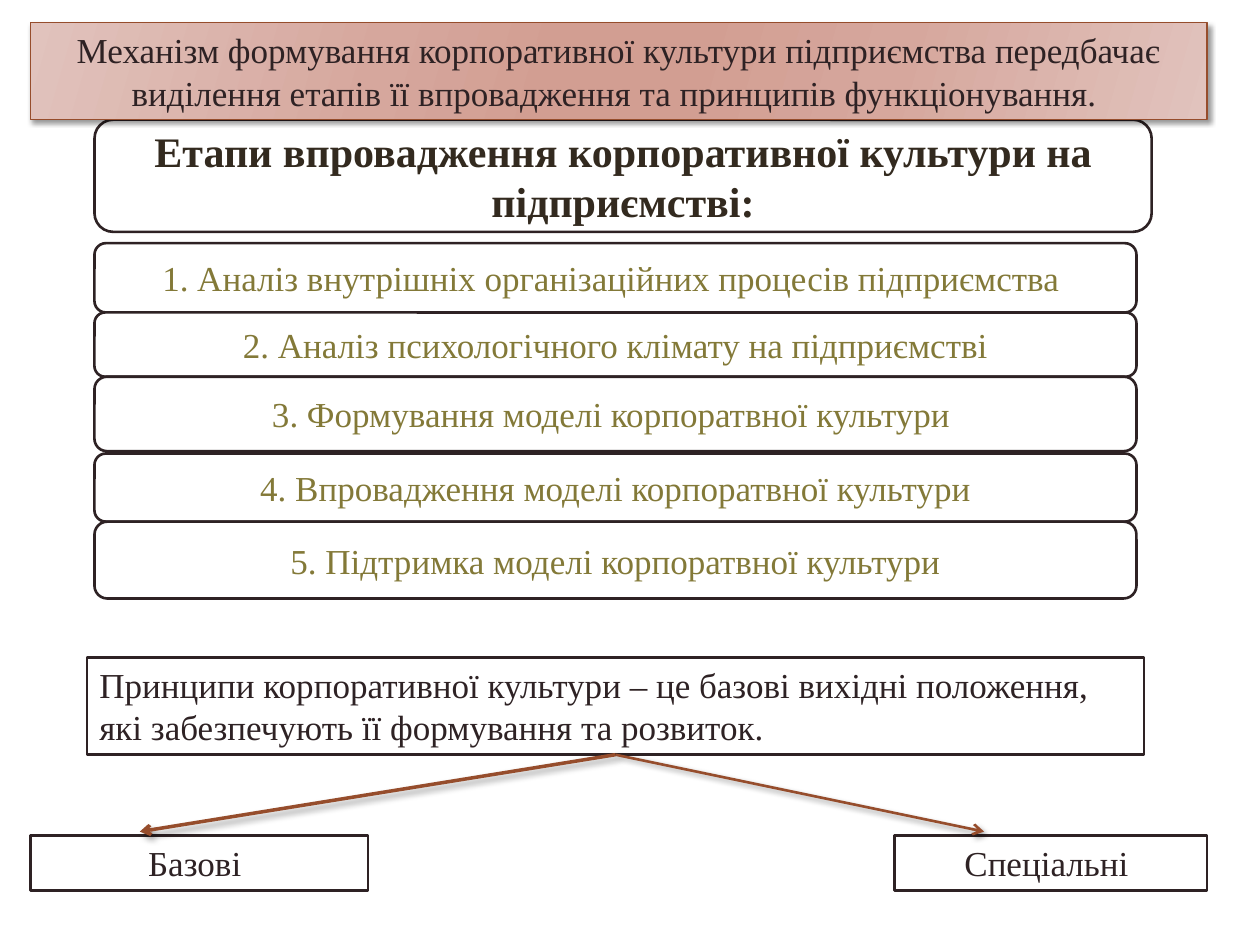
from lxml.etree import SubElement
from pptx import Presentation
from pptx.dml.color import RGBColor
from pptx.enum.shapes import MSO_CONNECTOR, MSO_SHAPE
from pptx.enum.text import MSO_ANCHOR, MSO_AUTO_SIZE, PP_ALIGN
from pptx.oxml.ns import qn
from pptx.util import Inches, Pt

WHITE = RGBColor(0xFF, 0xFF, 0xFF)
DARK = RGBColor(0x2E, 0x22, 0x24)
BROWN = RGBColor(0x33, 0x2A, 0x1F)
OLIVE = RGBColor(0x83, 0x79, 0x38)
RUST = RGBColor(0x96, 0x4D, 0x2C)
PALE_ROSE = RGBColor(0xE1, 0xC3, 0xBD)
MID_ROSE = RGBColor(0xD6, 0xA7, 0x9D)
DEEP_ROSE = RGBColor(0xD2, 0x9E, 0x92)


def style_box(shape, text, color, size=20, bold=False,
              align=PP_ALIGN.CENTER, anchor=MSO_ANCHOR.MIDDLE):
    shape.line.color.rgb = DARK
    shape.line.width = Pt(1.5)
    shape.shadow.inherit = False
    frame = shape.text_frame
    frame.text = text
    frame.word_wrap = True
    frame.auto_size = MSO_AUTO_SIZE.NONE
    frame.vertical_anchor = anchor
    paragraph = frame.paragraphs[0]
    paragraph.alignment = align
    font = paragraph.runs[0].font
    font.name = "Times New Roman"
    font.size = Pt(size)
    font.bold = bold
    font.color.rgb = color


def add_shadow(properties, blur, distance):
    effects = properties.find(qn("a:effectLst"))
    if effects is None:
        effects = SubElement(properties, qn("a:effectLst"))
    shadow = SubElement(effects, qn("a:outerShdw"), blurRad=str(Pt(blur)),
                        dist=str(Pt(distance)), dir=str(45 * 60000),
                        algn="tl", rotWithShape="0")
    color = SubElement(shadow, qn("a:srgbClr"), val="000000")
    SubElement(color, qn("a:alpha"), val="40000")


presentation = Presentation()
presentation.slide_width = Inches(10)
presentation.slide_height = Inches(7.5)
slide = presentation.slides.add_slide(presentation.slide_layouts[5])
shapes = slide.shapes

# Heading of the stages
heading = shapes.add_shape(MSO_SHAPE.ROUNDED_RECTANGLE, Inches(0.75),
                           Inches(0.95), Inches(8.39), Inches(0.89))
heading.fill.background()
style_box(heading, "Етапи впровадження корпоративної культури на підприємстві:",
          BROWN, size=24, bold=True)

# Five stages
stages = [
    (1.93, 0.55, "1. Аналіз внутрішніх організаційних процесів підприємства "),
    (2.48, 0.51, "2. Аналіз психологічного клімату на підприємстві"),
    (2.99, 0.59, "3. Формування моделі корпоратвної культури "),
    (3.60, 0.54, "4. Впровадження моделі корпоратвної культури"),
    (4.14, 0.61, "5. Підтримка моделі корпоратвної культури"),
]
for top, height, text in stages:
    stage = shapes.add_shape(MSO_SHAPE.ROUNDED_RECTANGLE, Inches(0.75),
                             Inches(top), Inches(8.27), Inches(height))
    stage.fill.solid()
    stage.fill.fore_color.rgb = WHITE
    style_box(stage, text, OLIVE)

# Principles and their two kinds
boxes = [
    (0.69, 5.22, 8.39, 0.77, PP_ALIGN.LEFT,
     "Принципи корпоративної культури – це базові вихідні положення, "
     "які забезпечують її формування та розвиток."),
    (0.24, 6.63, 2.68, 0.44, PP_ALIGN.CENTER, "Базові "),
    (7.10, 6.63, 2.48, 0.44, PP_ALIGN.CENTER, "Спеціальні "),
]
principle_boxes = []
for left, top, width, height, align, text in boxes:
    box = shapes.add_shape(MSO_SHAPE.RECTANGLE, Inches(left), Inches(top),
                           Inches(width), Inches(height))
    box.fill.solid()
    box.fill.fore_color.rgb = WHITE
    style_box(box, text, DARK, align=align, anchor=MSO_ANCHOR.TOP)
    principle_boxes.append(box)

# Arrows from the principles to their kinds
for end_x, width, blur, distance in [(1.11, 2, 4, 3), (7.81, 1.5, 3, 2)]:
    arrow = shapes.add_connector(MSO_CONNECTOR.STRAIGHT, Inches(4.89),
                                 Inches(6), Inches(end_x), Inches(6.6))
    arrow.begin_connect(principle_boxes[0], 2)
    arrow.line.color.rgb = RUST
    arrow.line.width = Pt(width)
    SubElement(arrow.line._get_or_add_ln(), qn("a:tailEnd"), type="arrow")
    add_shadow(arrow._element.spPr, blur, distance)

# Title banner, in front of the heading
title = shapes.title
title.left, title.top = Inches(0.24), Inches(0.18)
title.width, title.height = Inches(9.34), Inches(0.77)
title.fill.gradient()
title.fill.gradient_angle = 344
style_box(title, "Механізм формування корпоративної культури підприємства "
          "передбачає виділення етапів її впровадження та принципів "
          "функціонування. ", DARK, anchor=MSO_ANCHOR.TOP)
title.line.color.rgb = RUST
title.line.width = Pt(0.75)
add_shadow(title._element.spPr, 3, 2)

stop_list = title._element.spPr.find(qn("a:gradFill")).find(qn("a:gsLst"))
for stop in list(stop_list):
    stop_list.remove(stop)
for position, color in [(0, PALE_ROSE), (30, MID_ROSE), (45, DEEP_ROSE),
                        (55, DEEP_ROSE), (73, MID_ROSE), (100, PALE_ROSE)]:
    stop = SubElement(stop_list, qn("a:gs"), pos=str(position * 1000))
    SubElement(stop, qn("a:srgbClr"), val=str(color))
shapes._spTree.append(title._element)

presentation.save("out.pptx")
